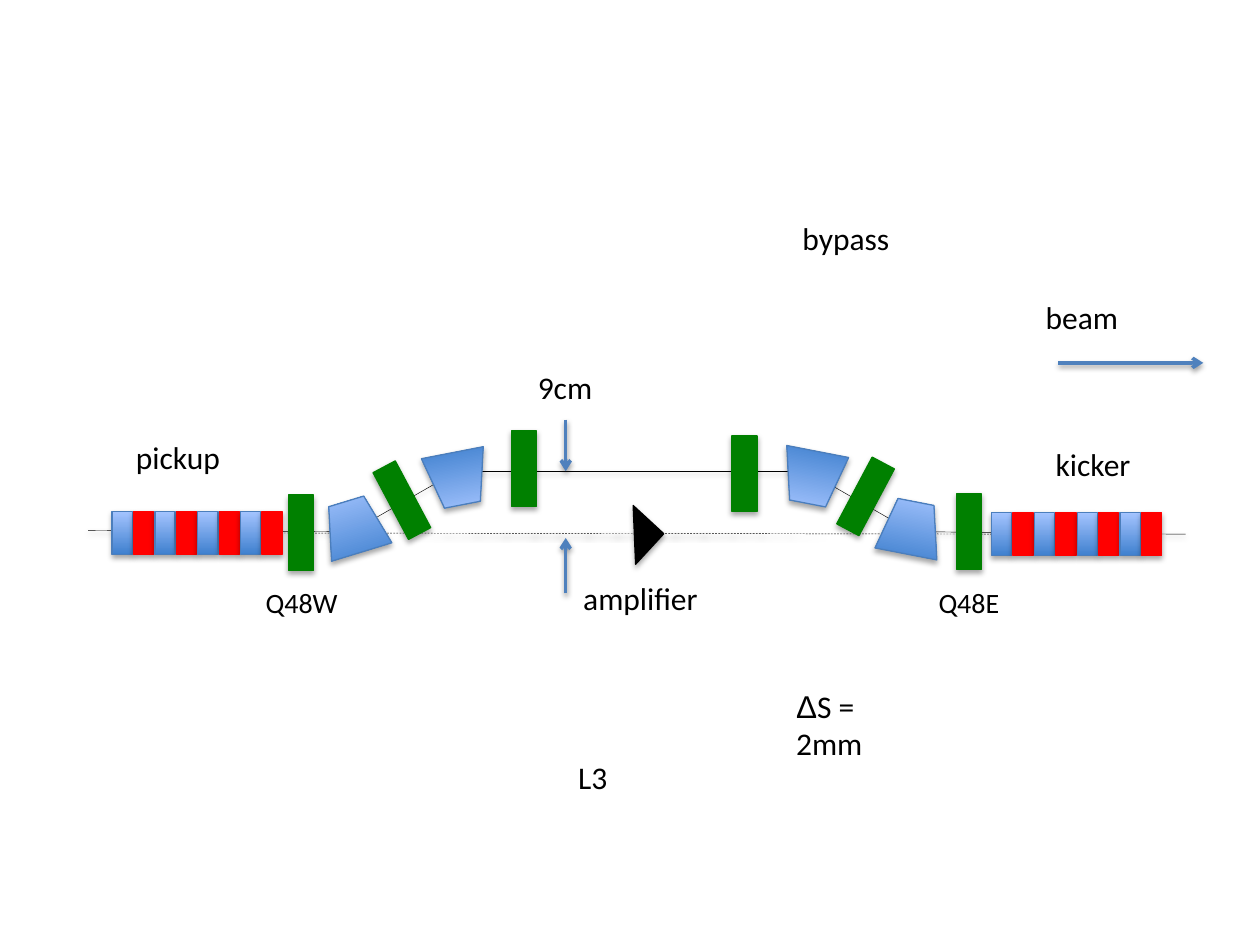
from pptx import Presentation
from pptx.dml.color import RGBColor
from pptx.enum.shapes import MSO_CONNECTOR, MSO_SHAPE
from pptx.enum.text import MSO_AUTO_SIZE
from pptx.oxml.ns import qn
from pptx.util import Inches, Pt
from lxml import etree

BLACK, RED, GREEN = "000000", "FF0000", "008000"
BLUE_EDGE, ARROW_BLUE = "4B7EBC", "4F81BD"
BLUE_GRADIENT = ("3F80CE", "A4C4FF")


def rgb(value):
    return RGBColor.from_string(value)


def add_shadow(sp, opacity, distance):
    """Give a shape or connector a soft shadow straight below it."""
    pr = sp._element.spPr
    for old in pr.findall(qn("a:effectLst")):
        pr.remove(old)
    effects = etree.SubElement(pr, qn("a:effectLst"))
    shadow = etree.SubElement(
        effects, qn("a:outerShdw"), blurRad=str(Pt(3.1)), dist=str(Pt(distance)),
        dir="5400000", rotWithShape="0")
    color = etree.SubElement(shadow, qn("a:srgbClr"), val=BLACK)
    etree.SubElement(color, qn("a:alpha"), val=str(opacity * 1000))


def add_part(slide, kind, x, y, w, h, color=None, rot=0, flip=None):
    """Add a shape; without a color it gets the blue magnet gradient."""
    sp = slide.shapes.add_shape(kind, Inches(x), Inches(y), Inches(w), Inches(h))
    if color:
        sp.fill.solid()
        sp.fill.fore_color.rgb = rgb(color)
    else:
        sp.fill.gradient()
        sp.fill.gradient_angle = 90
        for stop, position, value in zip(sp.fill.gradient_stops, (0, 1), BLUE_GRADIENT):
            stop.position = position
            stop.color.rgb = rgb(value)
    sp.line.color.rgb = rgb(color or BLUE_EDGE)
    sp.line.width = Pt(0.75)
    sp.rotation = rot
    if flip:
        sp._element.spPr.find(qn("a:xfrm")).set(flip, "1")
    add_shadow(sp, 35, 1.8)
    return sp


def add_line(slide, x1, y1, x2, y2, color=BLACK, width=0.25, dash=None, arrow=False):
    """Add a line; an arrow points at its second end."""
    line = slide.shapes.add_connector(
        MSO_CONNECTOR.STRAIGHT, Inches(x1), Inches(y1), Inches(x2), Inches(y2))
    line.line.color.rgb = rgb(color)
    line.line.width = Pt(width)
    ln = line.line._get_or_add_ln()
    if dash:
        etree.SubElement(ln, qn("a:prstDash"), val=dash)
    if arrow:
        etree.SubElement(ln, qn("a:tailEnd"), type="arrow")
    add_shadow(line, 38, 1.6)


def add_text(slide, text, x, y, w, h=0.4, size=18, symbol=""):
    """Add a one-line label, optionally led by a symbol in Arial."""
    box = slide.shapes.add_textbox(Inches(x), Inches(y), Inches(w), Inches(h))
    tf = box.text_frame
    tf.word_wrap = False
    tf.auto_size = MSO_AUTO_SIZE.SHAPE_TO_FIT_TEXT
    p = tf.paragraphs[0]
    for part, font in ((symbol, "Arial"), (text, "Calibri")):
        if part:
            r = p.add_run()
            r.text = part
            r.font.size = Pt(size)
            r.font.name = font
            r.font.color.rgb = rgb(BLACK)


def draw_beam_lines(slide, left, top):
    """Straight axis, and the bypass raised above it."""
    axis, bypass = top + 0.49, top
    add_line(slide, left + 1.38, axis, left + 8.01, axis + 0.01, dash="dash")
    add_line(slide, left, axis - 0.02, left + 2.16, axis - 0.01)
    add_line(slide, left + 2.89, bypass, left + 5.8, bypass)
    add_line(slide, left + 6.47, top + 0.44, left + 5.6, top - 0.06)
    add_line(slide, left + 6.55, axis - 0.01, left + 8.71, axis + 0.01)
    add_line(slide, left + 2.16, top + 0.44, left + 3.03, top - 0.06)


def draw_undulator(slide, left, top, count=8, pitch=0.17):
    """Row of alternating blue and red magnets."""
    for i in range(count):
        add_part(slide, MSO_SHAPE.RECTANGLE, left + i * pitch, top, 0.16, 0.34,
                 color=RED if i % 2 else None)


def draw_bypass_magnets(slide, left, top):
    """Dipoles (trapezoids) and quadrupoles (green bars) of the bypass."""
    dipoles = ((0.27, 0.55, 343, None), (1.09, 0.17, 349, "flipV"),
               (4.69, 0.56, 11, None), (3.91, 0.16, 11, "flipV"))
    for x, y, rot, flip in dipoles:
        add_part(slide, MSO_SHAPE.TRAPEZOID, left + x, top + y, 0.5, 0.42,
                 rot=rot, flip=flip)
    quadrupoles = ((0, 0.51, 0), (5.3, 0.5, 0), (0.8, 0.25, 332),
                   (4.48, 0.22, 28), (1.77, 0, 0), (3.52, 0.04, 0))
    for x, y, rot in quadrupoles:
        add_part(slide, MSO_SHAPE.RECTANGLE, left + x, top + y, 0.2, 0.6,
                 color=GREEN, rot=rot)


def draw_amplifier(slide, left, top):
    add_part(slide, MSO_SHAPE.RIGHT_TRIANGLE, left, top, 0.33, 0.33,
             color=BLACK, rot=312.7, flip="flipH")
    add_text(slide, "amplifier", left - 0.34, top + 0.47, 1.12)


def draw_offset_mark(slide, left, top):
    """Two arrows marking the height of the bypass."""
    add_text(slide, "9cm", left - 0.32, top - 0.46, 0.64)
    for start, end in ((0, 0.41), (1.38, 0.94)):
        add_line(slide, left, top + start, left, top + end,
                 color=ARROW_BLUE, width=2, arrow=True)


def draw_beam_direction(slide, left, top):
    add_text(slide, "beam", left, top, 0.78)
    add_line(slide, left + 0.2, top + 0.56, left + 1.35, top + 0.56,
             color=ARROW_BLUE, width=2, arrow=True)


def draw_labels(slide):
    add_text(slide, "kicker", 8.28, 3.48, 0.81)
    add_text(slide, "pickup", 0.98, 3.43, 0.88)
    add_text(slide, "bypass", 6.27, 1.69, 0.9)
    add_text(slide, "L3", 4.49, 5.97, 0.44)
    add_text(slide, "Q48W", 2.01, 4.6, 0.78, h=0.37, size=16)
    add_text(slide, "Q48E", 7.35, 4.6, 0.69, h=0.37, size=16)
    add_text(slide, "S = 2mm", 6.22, 5.4, 1.24, symbol="Δ")


def main():
    prs = Presentation()
    prs.slide_width, prs.slide_height = Inches(10), Inches(7.5)
    slide = prs.slides.add_slide(prs.slide_layouts[6])
    draw_beam_lines(slide, 0.7, 3.74)
    draw_undulator(slide, 0.89, 4.06)  # pickup
    draw_undulator(slide, 7.87, 4.07)  # kicker
    draw_bypass_magnets(slide, 2.29, 3.42)
    draw_amplifier(slide, 4.87, 4.08)
    draw_offset_mark(slide, 4.49, 3.33)
    draw_beam_direction(slide, 8.2, 2.32)
    draw_labels(slide)
    prs.save("out.pptx")


if __name__ == "__main__":
    main()
